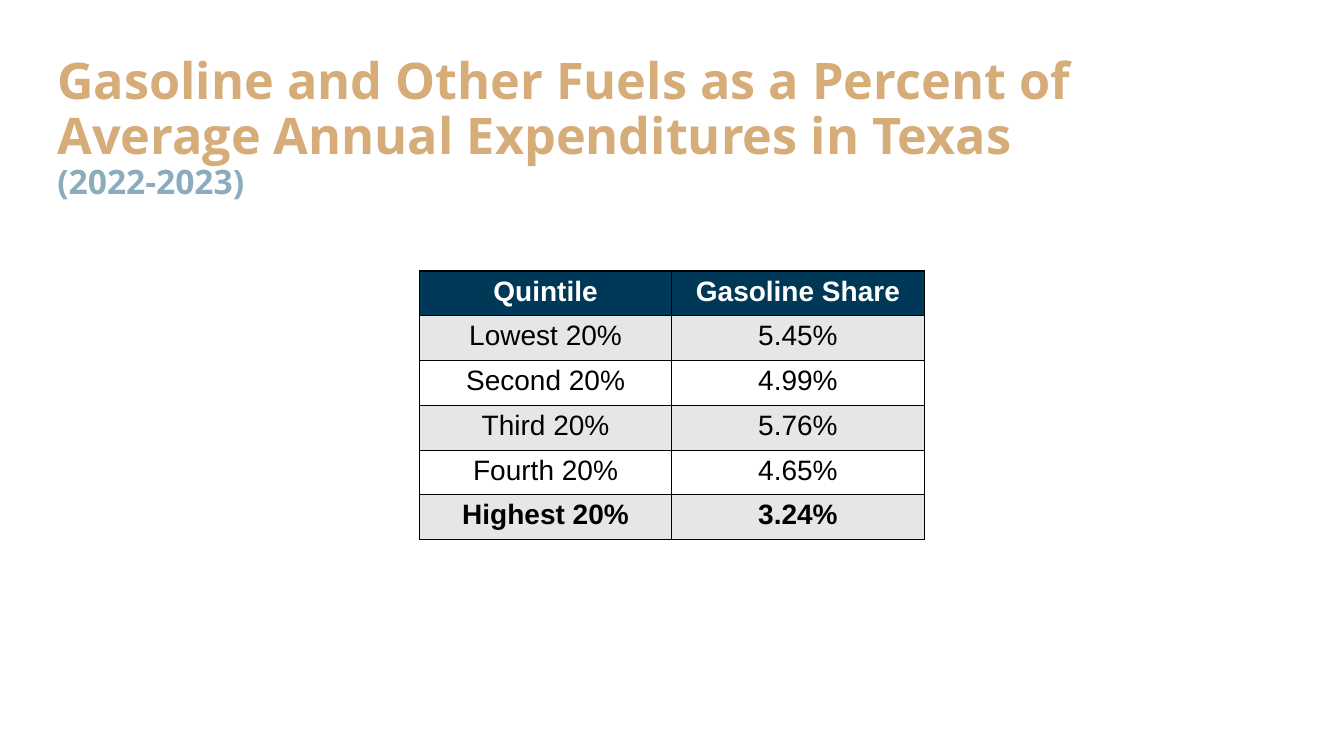
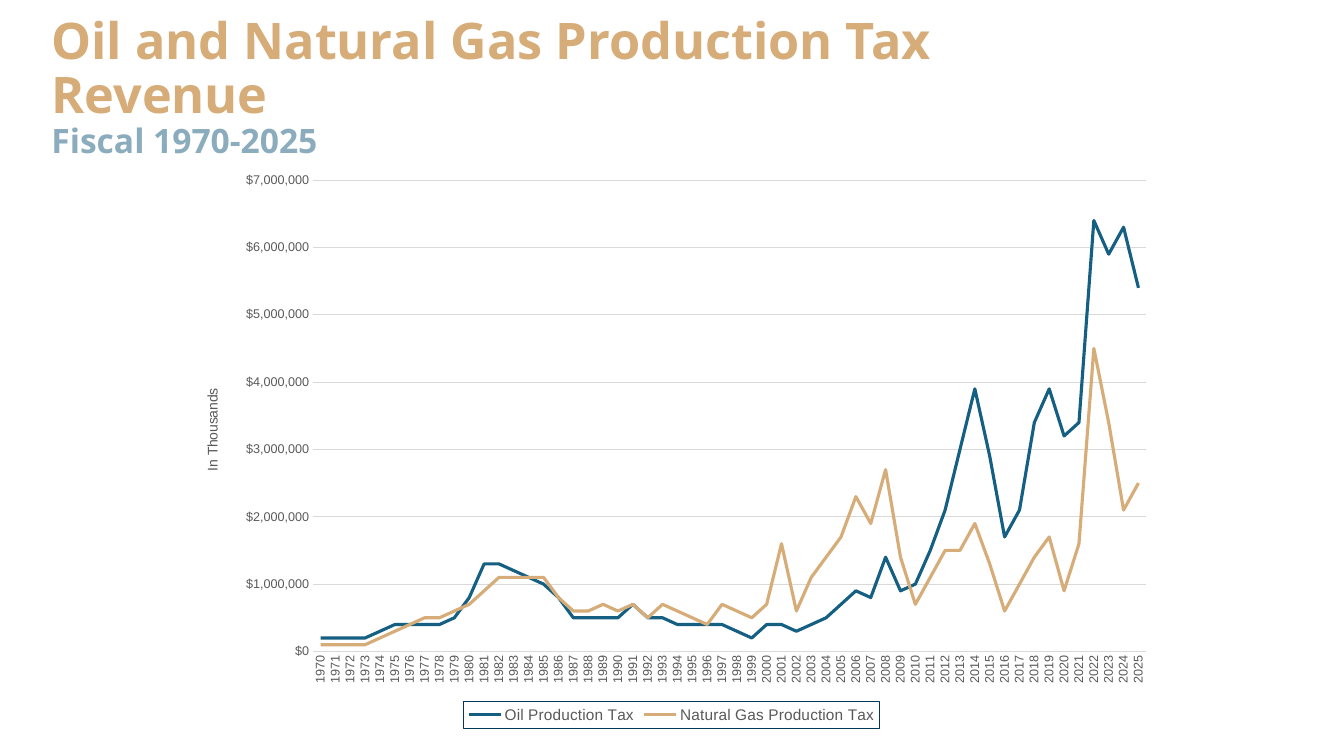
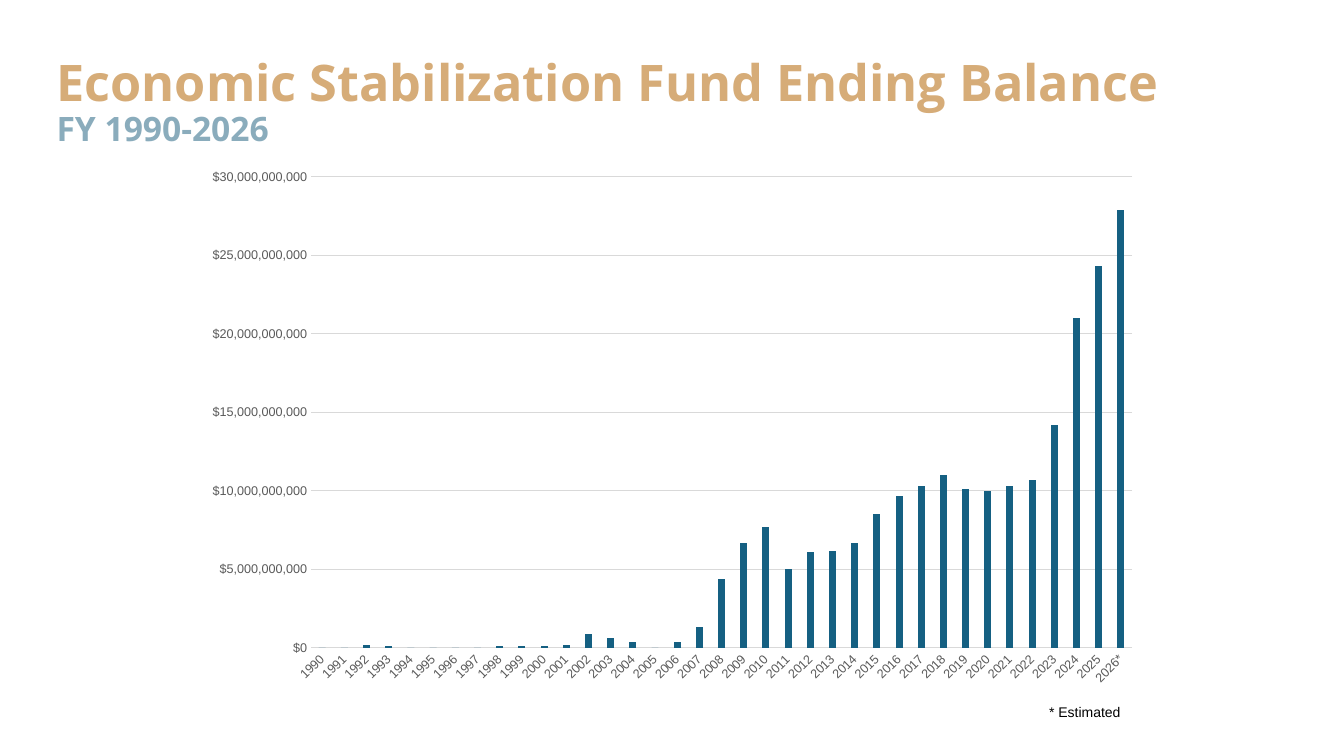
from lxml import etree
from pptx import Presentation
from pptx import util as u
from pptx.chart import data as chart_data
from pptx.dml.color import RGBColor
from pptx.enum import chart as ch, text as tx
from pptx.oxml import parse_xml
from pptx.oxml.ns import nsdecls, qn

COLORS = {
    "gold": "D6AC78", "mist": "8AACBC", "navy": "003857", "blue": "156082",
    "band": "E6E6E6", "grid": "D9D9D9", "label": "595959",
    "white": "FFFFFF", "black": "000000",
}
TITLE_FONT, BODY_FONT = "Open Sans", "Arial"
DOLLARS = '"$"#,##0'

GASOLINE_SHARES = [
    ("Quintile", "Gasoline Share"),
    ("Lowest 20%", "5.45%"),
    ("Second 20%", "4.99%"),
    ("Third 20%", "5.76%"),
    ("Fourth 20%", "4.65%"),
    ("Highest 20%", "3.24%"),
]
# Tax revenue in hundreds of millions of dollars, from 1970
OIL_TAX = [
    2, 2, 2, 2, 3, 4, 4, 4, 4, 5, 8, 13, 13, 12, 11, 10, 8, 5, 5, 5,
    5, 7, 5, 5, 4, 4, 4, 4, 3, 2, 4, 4, 3, 4, 5, 7, 9, 8, 14, 9,
    10, 15, 21, 30, 39, 29, 17, 21, 34, 39, 32, 34, 64, 59, 63, 54]
GAS_TAX = [
    1, 1, 1, 1, 2, 3, 4, 5, 5, 6, 7, 9, 11, 11, 11, 11, 8, 6, 6, 7,
    6, 7, 5, 7, 6, 5, 4, 7, 6, 5, 7, 16, 6, 11, 14, 17, 23, 19, 27, 14,
    7, 11, 15, 15, 19, 13, 6, 10, 14, 17, 9, 16, 45, 34, 21, 25]
# Fund balance in hundreds of millions of dollars, from 1990
FUND_BALANCE = [
    0, 0, 2, 1, 0, 0, 0, 0, 1, 1, 1, 2, 9, 6, 4, 0, 4, 13, 44, 67,
    77, 50, 61, 62, 67, 85, 97, 103, 110, 101, 100, 103, 107, 142, 210, 243,
    279]


def rgb(name):
    return RGBColor.from_string(COLORS[name])


def style_font(font, size, color, bold=False, face=BODY_FONT):
    font.name, font.size, font.bold = face, u.Pt(size), bold
    font.color.rgb = rgb(color)


def cm_box(box):
    return [u.Cm(length) for length in box]


def add_titled_slide(prs, heading, period, box):
    slide = prs.slides.add_slide(prs.slide_layouts[5])
    title = slide.shapes.title
    title.left, title.top, title.width, title.height = cm_box(box)
    frame = title.text_frame
    frame.auto_size = tx.MSO_AUTO_SIZE.NONE
    frame.vertical_anchor = tx.MSO_ANCHOR.MIDDLE
    line = frame.paragraphs[0]
    line.text = f"{heading}\v{period}"
    line.alignment, line.line_spacing = tx.PP_ALIGN.LEFT, 0.9
    for run, size, color in zip(line.runs, (36, 24), ("gold", "mist")):
        style_font(run.font, size, color, True, TITLE_FONT)
    # The line break must not keep the larger size of the master
    line_break = line._p.find(qn("a:br"))
    etree.SubElement(line_break, qn("a:rPr"), sz="3600")
    return slide


def set_borders(cell, color, points):
    props = cell._tc.get_or_add_tcPr()
    for index, side in enumerate(("lnL", "lnR", "lnT", "lnB")):
        props.insert(index, parse_xml(
            f'<a:{side} {nsdecls("a")} w="{u.Pt(points)}"><a:solidFill>'
            f'<a:srgbClr val="{COLORS[color]}"/></a:solidFill></a:{side}>'))


def fill_cell(cell, words, fill, color, bold):
    cell.fill.solid()
    cell.fill.fore_color.rgb = rgb(fill)
    cell.margin_left = cell.margin_right = u.Cm(0.18)
    cell.margin_top = cell.margin_bottom = 0
    line = cell.text_frame.paragraphs[0]
    line.text = words
    line.alignment, line.line_spacing = tx.PP_ALIGN.CENTER, 1.15
    style_font(line.runs[0].font, 20, color, bold)
    set_borders(cell, "black", 1)


def add_share_table(slide, rows, box):
    """Add a banded table whose first and last rows are bold."""
    table = slide.shapes.add_table(len(rows), len(rows[0]), *cm_box(box)).table
    table.horz_banding = False
    for r, row in enumerate(rows):
        fill = "navy" if r == 0 else "band" if r % 2 else "white"
        color = "white" if r == 0 else "black"
        for c, words in enumerate(row):
            fill_cell(table.cell(r, c), words, fill, color,
                      r in (0, len(rows) - 1))


def place_part(part, index, chart_box, part_box, inner=False):
    """Fix a chart part at a slide position (cm); its size is optional."""
    for old in part.findall(qn("c:layout")):
        part.remove(old)
    layout = etree.Element(qn("c:layout"))
    manual = etree.SubElement(layout, qn("c:manualLayout"))
    left, top, width, height = chart_box
    settings = [("layoutTarget", "inner")] if inner else []
    settings += [("xMode", "edge"), ("yMode", "edge"),
                 ("x", (part_box[0] - left) / width),
                 ("y", (part_box[1] - top) / height)]
    if len(part_box) == 4:
        settings += [("w", part_box[2] / width), ("h", part_box[3] / height)]
    for tag, value in settings:
        etree.SubElement(manual, qn(f"c:{tag}"), val=str(value))
    part.insert(index, layout)


def style_axes(chart, top, step, label_angle):
    years, dollars = chart.category_axis, chart.value_axis
    for axis in (years, dollars):
        axis.major_tick_mark = axis.minor_tick_mark = ch.XL_TICK_MARK.NONE
        style_font(axis.tick_labels.font, 9, "label")
    years._element.txPr.bodyPr.set("rot", str(label_angle * 60000))
    dollars.minimum_scale, dollars.maximum_scale = 0, top
    dollars.major_unit = step
    dollars.tick_labels.number_format = DOLLARS
    dollars.tick_labels.number_format_is_linked = False
    dollars.format.line.fill.background()
    for line in (years.format.line, dollars.major_gridlines.format.line):
        line.color.rgb, line.width = rgb("grid"), u.Pt(0.75)


def add_year_chart(slide, kind, years, series, box, plot_box,
                   top, step, label_angle):
    content = chart_data.CategoryChartData(number_format=DOLLARS)
    content.categories = years
    for name, values in series:
        content.add_series(name, values)
    chart = slide.shapes.add_chart(kind, *cm_box(box), content).chart
    chart.has_title = chart.has_legend = False
    style_font(chart.font, 10, "black")
    style_axes(chart, top, step, label_angle)
    chart.plots[0].vary_by_categories = False
    place_part(chart.plots[0]._element.getparent(), 0, box, plot_box, True)
    return chart


def add_framed_legend(chart, chart_box, legend_box):
    chart.has_legend = True
    legend = chart.legend
    legend.position = ch.XL_LEGEND_POSITION.BOTTOM
    legend.include_in_layout = False
    style_font(legend.font, 11, "label")
    legend._element.find(qn("c:txPr")).addprevious(parse_xml(
        f'<c:spPr {nsdecls("c", "a")}><a:ln w="{u.Pt(0.75)}"><a:solidFill>'
        f'<a:srgbClr val="{COLORS["navy"]}"/></a:solidFill></a:ln></c:spPr>'))
    place_part(legend._element, 1, chart_box, legend_box)


def add_axis_title(chart, words, chart_box, corner):
    title = chart.value_axis.axis_title
    title.text_frame.text = words
    style_font(title.text_frame.paragraphs[0].runs[0].font, 10, "label")
    title.text_frame._txBody.bodyPr.set("rot", str(-90 * 60000))
    place_part(title._element, 1, chart_box, corner)


def add_note(slide, words, box):
    frame = slide.shapes.add_textbox(*cm_box(box)).text_frame
    frame.word_wrap = True
    line = frame.paragraphs[0]
    line.text, line.line_spacing = words, 1.15
    style_font(line.runs[0].font, 10, "black")


def build_gasoline_slide(prs):
    slide = add_titled_slide(
        prs, "Gasoline and Other Fuels as a Percent of "
        "Average Annual Expenditures in Texas", "(2022-2023)",
        (1.19, 1.02, 26.7, 4.45))
    add_share_table(slide, GASOLINE_SHARES, (10.57, 6.83, 12.72, 6.77))


def build_tax_slide(prs):
    slide = add_titled_slide(
        prs, "Oil and Natural Gas Production Tax Revenue", "Fiscal 1970-2025",
        (1.04, 0.38, 25.55, 3.68))
    box = (4.5, 4.06, 24.89, 14.3)
    series = [("Oil Production Tax", [v * 100_000 for v in OIL_TAX]),
              ("Natural Gas Production Tax", [v * 100_000 for v in GAS_TAX])]
    chart = add_year_chart(
        slide, ch.XL_CHART_TYPE.LINE, [str(y) for y in range(1970, 2026)],
        series, box, (7.89, 4.54, 20.99, 11.89), 7_000_000, 1_000_000, -90)
    for tax, color in zip(chart.series, ("blue", "gold")):
        tax.smooth = False
        tax.marker.style = ch.XL_MARKER_STYLE.NONE
        tax.format.line.color.rgb = rgb(color)
        tax.format.line.width = u.Pt(2.25)
    add_axis_title(chart, "In Thousands", box, (5.06, 9.73))
    add_framed_legend(chart, box, (11.69, 17.69, 10.48, 0.68))


def build_fund_slide(prs):
    slide = add_titled_slide(
        prs, "Economic Stabilization Fund Ending Balance", "FY 1990-2026",
        (1.17, 0.76, 29.21, 3.68))
    years = [str(y) for y in range(1990, 2026)] + ["2026*"]
    chart = add_year_chart(
        slide, ch.XL_CHART_TYPE.COLUMN_CLUSTERED, years,
        [("Series 1", [v * 100_000_000 for v in FUND_BALANCE])],
        (4.85, 4.01, 24.13, 13.56), (7.84, 4.46, 20.69, 11.87),
        30_000_000_000, 5_000_000_000, -45)
    columns = chart.plots[0]
    columns.gap_width, columns.overlap = 219, -27
    fill = columns.series[0].format.fill
    fill.solid()
    fill.fore_color.rgb = rgb("blue")
    add_note(slide, "* Estimated", (26.19, 17.55, 2.82, 0.71))


def main():
    prs = Presentation()
    prs.slide_width, prs.slide_height = u.Cm(33.87), u.Cm(19.05)
    build_gasoline_slide(prs)
    build_tax_slide(prs)
    build_fund_slide(prs)
    prs.save("out.pptx")


if __name__ == "__main__":
    main()
